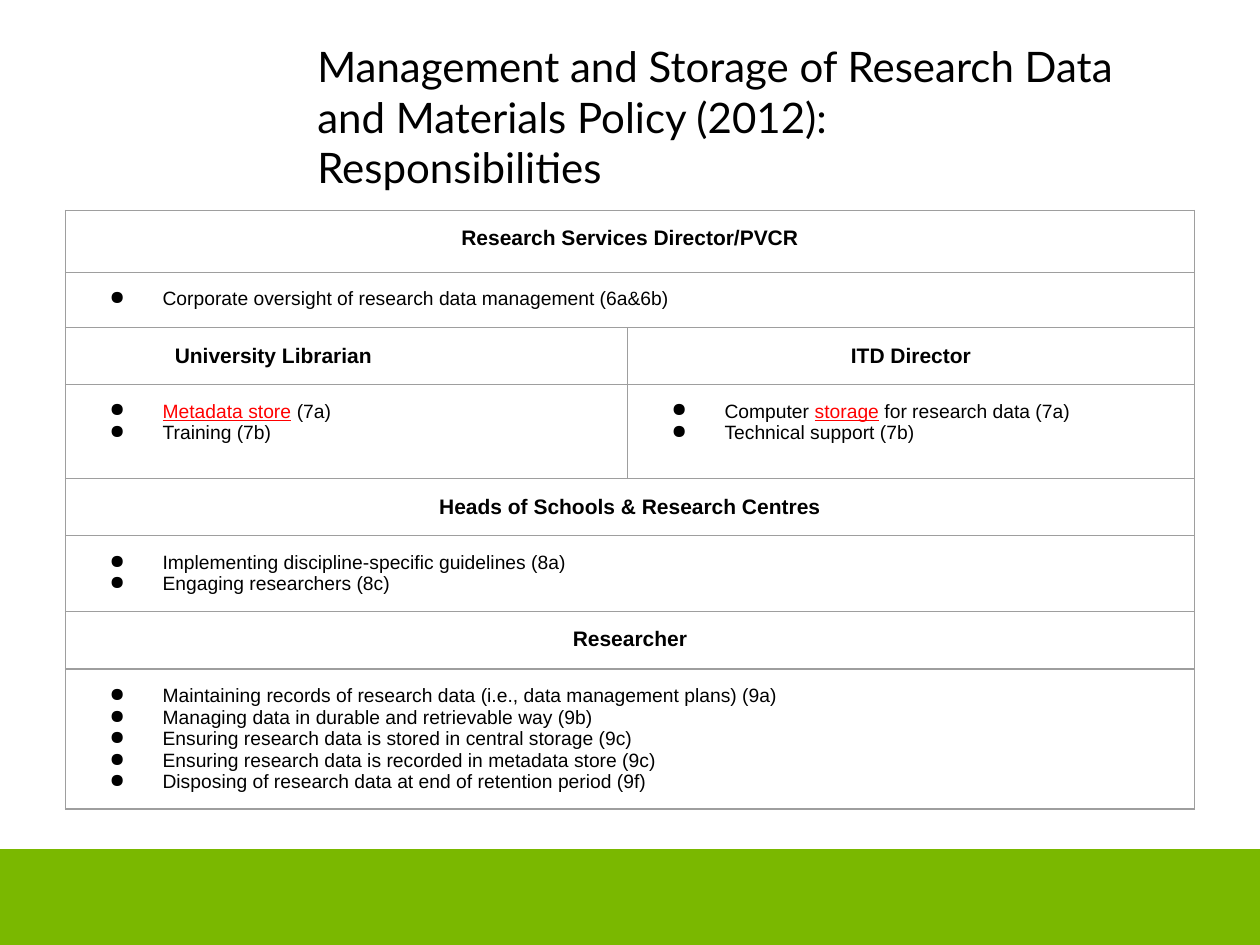
from lxml.etree import SubElement
from pptx import Presentation
from pptx.dml.color import RGBColor
from pptx.enum.shapes import MSO_SHAPE
from pptx.enum.text import MSO_ANCHOR, PP_ALIGN
from pptx.oxml import parse_xml
from pptx.oxml.ns import nsdecls, qn
from pptx.util import Inches, Pt

GREEN = RGBColor(0x7A, 0xB8, 0x00)
BLACK = RGBColor(0, 0, 0)
RED = RGBColor(0xFF, 0, 0)
GRAY = RGBColor(0x9E, 0x9E, 0x9E)

COLUMN_WIDTHS = [4.46, 4.5]
# Each section: heading height, duties height, and its (heading, duties) columns.
# A duty is a list of (text, is_link) spans.
SECTIONS = [
    (0.49, 0.44, [
        ("Research Services Director/PVCR",
         [[("Corporate oversight of research data management (6a&6b)", False)]]),
    ]),
    (0.45, 0.75, [
        ("University Librarian",
         [[("Metadata store", True), (" (7a)", False)],
          [("Training (7b)", False)]]),
        ("ITD Director",
         [[("Computer ", False), ("storage", True), (" for research data (7a)", False)],
          [("Technical support (7b)", False)]]),
    ]),
    (0.45, 0.6, [
        ("Heads of Schools & Research Centres",
         [[("Implementing discipline-specific guidelines (8a)", False)],
          [("Engaging researchers (8c)", False)]]),
    ]),
    (0.46, 1.11, [
        ("Researcher",
         [[("Maintaining records of research data (i.e., data management plans) (9a)", False)],
          [("Managing data in durable and retrievable way (9b)", False)],
          [("Ensuring research data is stored in central storage (9c)", False)],
          [("Ensuring research data is recorded in metadata store (9c)", False)],
          [("Disposing of research data at end of retention period (9f)", False)]]),
    ]),
]


def add_footer_band(page, left, top, width, height):
    band = page.shapes.add_shape(MSO_SHAPE.RECTANGLE, left, top, width, height)
    band.shadow.inherit = False
    band.fill.solid()
    band.fill.fore_color.rgb = GREEN
    band.line.fill.background()


def add_title(page, left, top, width, height):
    frame = page.shapes.add_textbox(left, top, width, height).text_frame
    frame.word_wrap = True
    frame.vertical_anchor = MSO_ANCHOR.MIDDLE
    frame.margin_left = frame.margin_right = Inches(0.1)
    frame.margin_top = frame.margin_bottom = Inches(0.1)
    para = frame.paragraphs[0]
    para.text = ("Management and Storage of Research Data and Materials Policy (2012):"
                 "\vResponsibilities")
    para.font.name = "Lato"
    para.font.size = Pt(24)
    para.font.color.rgb = BLACK


def format_cell(cell):
    """Clear the fill, set the margins and draw a thin gray border."""
    cell.margin_left = cell.margin_right = Inches(0.1)
    cell.margin_top = cell.margin_bottom = Inches(0.13)
    cell.fill.background()
    properties = cell._tc.get_or_add_tcPr()
    for position, side in enumerate(("lnL", "lnR", "lnT", "lnB")):
        properties.insert(position, parse_xml(
            f'<a:{side} {nsdecls("a")} w="{Pt(0.75)}"><a:solidFill>'
            f'<a:srgbClr val="{GRAY}"/></a:solidFill></a:{side}>'))


def style_paragraph(para, size, bold):
    para.font.name = "Arial"
    para.font.size = Pt(size)
    para.font.bold = bold
    para.font.color.rgb = BLACK


def add_bullet(para):
    properties = para._p.get_or_add_pPr()
    properties.set("marL", str(Inches(0.67)))
    properties.set("indent", str(Inches(-0.42)))
    color = SubElement(properties, qn("a:buClr"))
    SubElement(color, qn("a:srgbClr"), val=str(BLACK))
    SubElement(properties, qn("a:buChar"), char="●")


def fill_heading(cell, heading):
    para = cell.text_frame.paragraphs[0]
    para.text = heading
    para.alignment = PP_ALIGN.CENTER
    style_paragraph(para, 12, True)


def fill_duties(cell, duties):
    frame = cell.text_frame
    for index, duty in enumerate(duties):
        para = frame.add_paragraph() if index else frame.paragraphs[0]
        add_bullet(para)
        style_paragraph(para, 11, False)
        for text, is_link in duty:
            span = para.add_run()
            span.text = text
            if is_link:
                span.font.color.rgb = RED
                span.font.underline = True


def add_responsibilities(page, left, top, width, height):
    table = page.shapes.add_table(
        2 * len(SECTIONS), len(COLUMN_WIDTHS), left, top, width, height).table
    table.first_row = table.horz_banding = False
    for column, column_width in zip(table.columns, COLUMN_WIDTHS):
        column.width = Inches(column_width)
    for cell in table.iter_cells():
        format_cell(cell)
    for index, (heading_height, duties_height, columns) in enumerate(SECTIONS):
        heading_row, duties_row = 2 * index, 2 * index + 1
        table.rows[heading_row].height = Inches(heading_height)
        table.rows[duties_row].height = Inches(duties_height)
        if len(columns) == 1:
            for row in (heading_row, duties_row):
                table.cell(row, 0).merge(table.cell(row, 1))
        for column, (heading, duties) in enumerate(columns):
            fill_heading(table.cell(heading_row, column), heading)
            fill_duties(table.cell(duties_row, column), duties)
    # The librarian heading sits left of its column's centre.
    table.cell(2, 0).margin_right = Inches(1.26)


def main():
    deck = Presentation()
    deck.slide_width, deck.slide_height = Inches(10), Inches(7.5)
    page = deck.slides.add_slide(deck.slide_layouts[6])
    add_footer_band(page, Inches(0), Inches(6.74), Inches(10), Inches(0.76))
    add_responsibilities(page, Inches(0.52), Inches(1.67), Inches(8.96), Inches(4.75))
    add_title(page, Inches(2.42), Inches(0.3), Inches(7.08), Inches(1.25))
    deck.save("out.pptx")


if __name__ == "__main__":
    main()
